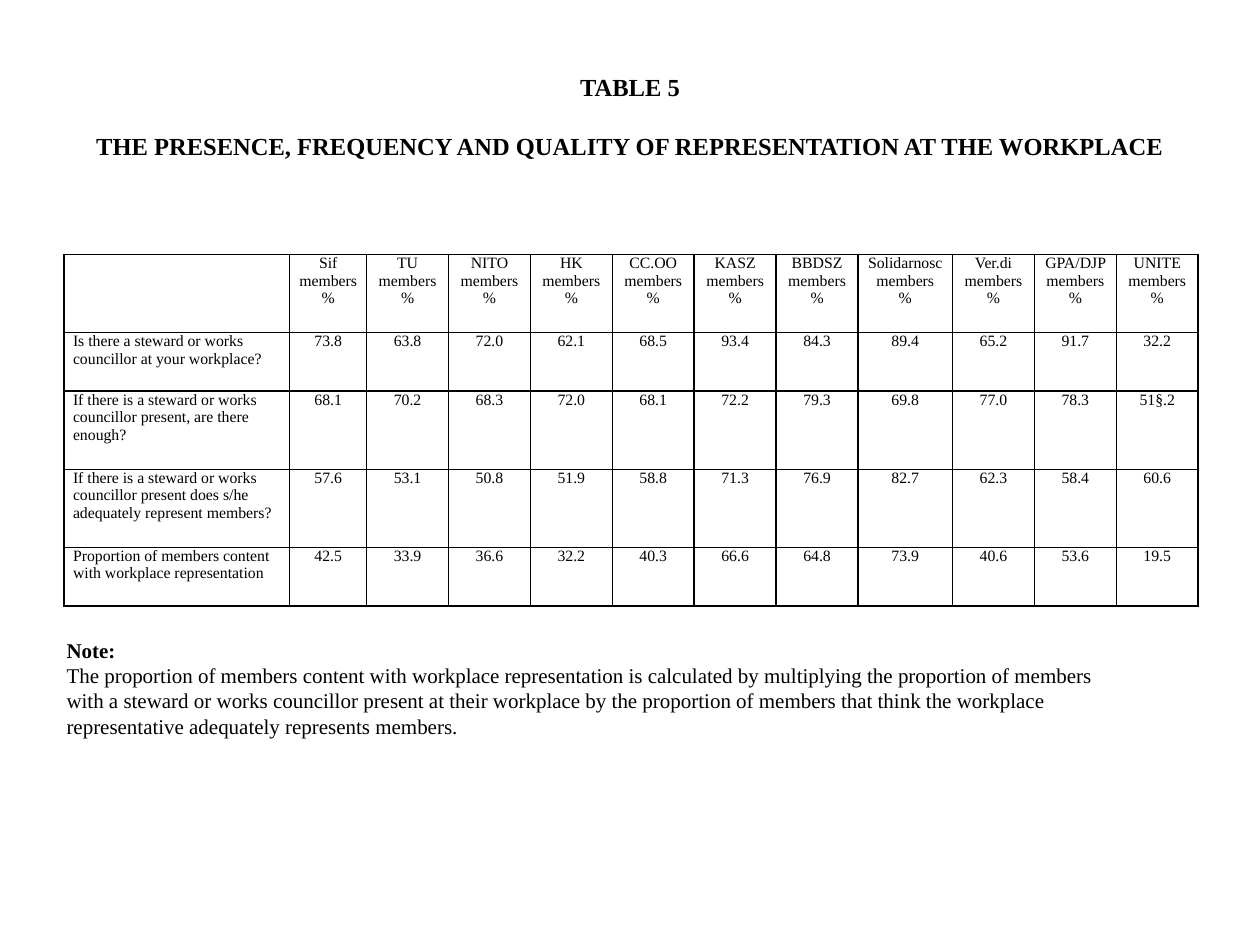
from lxml.etree import SubElement
from pptx import Presentation
from pptx.dml.color import RGBColor
from pptx.enum.text import MSO_ANCHOR, MSO_AUTO_SIZE, PP_ALIGN
from pptx.oxml import parse_xml
from pptx.oxml.ns import nsdecls, qn
from pptx.util import Inches, Pt

COLORS = {"ink": "000000", "paper": "FFFFFF"}
GRID = 0.1  # inches per grid column and row
LINE_ROWS = 1.55  # grid rows taken by one line of table text

UNIONS = ["Sif", "TU", "NITO", "HK", "CC.OO", "KASZ", "BBDSZ",
          "Solidarnosc", "Ver.di", "GPA/DJP", "UNITE"]
COLUMN_WIDTHS = [17.9, 6.1] + [6.5] * 6 + [7.5] + [6.5] * 3

# Question, lines of text in its row, and shares by union
ANSWERS = [
    ("Is there a steward or works councillor at your workplace?", 3,
     "73.8 63.8 72.0 62.1 68.5 93.4 84.3 89.4 65.2 91.7 32.2"),
    ("If there is a steward or works councillor present, are there enough?", 4,
     "68.1 70.2 68.3 72.0 68.1 72.2 79.3 69.8 77.0 78.3 51§.2"),
    ("If there is a steward or works councillor present does s/he "
     "adequately represent members?", 4,
     "57.6 53.1 50.8 51.9 58.8 71.3 76.9 82.7 62.3 58.4 60.6"),
    ("Proportion of members content with workplace representation", 3,
     "42.5 33.9 36.6 32.2 40.3 66.6 64.8 73.9 40.6 53.6 19.5"),
]
HEADER_LINES = 4

NOTE = ("The proportion of members content with workplace representation is "
        "calculated by multiplying the proportion of members with a steward or "
        "works councillor present at their workplace by the proportion of members "
        "that think the workplace representative adequately represents members.")


def grid(units):
    return Inches(units * GRID)


def apply(target, **values):
    for name, value in values.items():
        setattr(target, name, value)


class SlideBuilder:
    font_name = "Times New Roman"

    def __init__(self, deck):
        self.slide = deck.slides.add_slide(deck.slide_layouts[5])
        background = self.slide.background.fill
        background.solid()
        background.fore_color.rgb = RGBColor.from_string(COLORS["paper"])

    def add_lines(self, frame, lines, size, align=PP_ALIGN.LEFT, bold_lines=0, gap=0):
        """Add one paragraph per line; the first bold_lines are bold."""
        for index, line in enumerate(lines):
            paragraph = frame.add_paragraph() if index else frame.paragraphs[0]
            apply(paragraph, alignment=align, space_before=Pt(gap if index else 0))
            run = paragraph.add_run()
            run.text = line
            apply(run.font, name=self.font_name, size=Pt(size),
                  bold=index < bold_lines)
            run.font.color.rgb = RGBColor.from_string(COLORS["ink"])

    def title(self, lines, left, top, width, height):
        heading = self.slide.shapes.title
        apply(heading, left=grid(left), top=grid(top),
              width=grid(width), height=grid(height))
        frame = heading.text_frame
        apply(frame, vertical_anchor=MSO_ANCHOR.MIDDLE, word_wrap=True,
              auto_size=MSO_AUTO_SIZE.NONE)
        self.add_lines(frame, lines, 14, PP_ALIGN.CENTER, len(lines), gap=17)

    def border(self, cell):
        properties = cell._tc.get_or_add_tcPr()
        for index, side in enumerate(("lnL", "lnR", "lnT", "lnB")):
            edge = parse_xml(f'<a:{side} {nsdecls("a")} w="{Pt(1)}"/>')
            fill = SubElement(edge, qn("a:solidFill"))
            SubElement(fill, qn("a:srgbClr"), val=COLORS["ink"])
            properties.insert(index, edge)

    def table(self, rows, widths, heights, left, top):
        table = self.slide.shapes.add_table(
            len(rows), len(widths), grid(left), grid(top),
            grid(sum(widths)), grid(sum(heights))).table
        apply(table, first_row=False, horz_banding=False)
        for column, width in zip(table.columns, widths):
            column.width = grid(width)
        for row, height, contents in zip(table.rows, heights, rows):
            row.height = grid(height)
            for index, (cell, lines) in enumerate(zip(row.cells, contents)):
                apply(cell, margin_left=grid(0.7), margin_right=grid(0.7),
                      margin_top=0, margin_bottom=0)
                cell.fill.background()
                self.border(cell)
                align = PP_ALIGN.CENTER if index else PP_ALIGN.LEFT
                self.add_lines(cell.text_frame, lines, 9, align)

    def note(self, lines, left, top, width, height):
        frame = self.slide.shapes.add_textbox(
            grid(left), grid(top), grid(width), grid(height)).text_frame
        apply(frame, word_wrap=True, auto_size=MSO_AUTO_SIZE.SHAPE_TO_FIT_TEXT)
        self.add_lines(frame, lines, 12, bold_lines=1)


def main():
    deck = Presentation()
    apply(deck, slide_width=Inches(10), slide_height=Inches(7.5))
    page = SlideBuilder(deck)

    # Heading
    page.title(["TABLE 5", "THE PRESENCE, FREQUENCY AND QUALITY OF "
                "REPRESENTATION AT THE WORKPLACE"], 5, 3, 90, 12.5)

    # Survey results by union
    header = [[""]] + [[f"{union} members", "%"] for union in UNIONS]
    body = [[[question]] + [[share] for share in shares.split()]
            for question, _, shares in ANSWERS]
    line_counts = [HEADER_LINES] + [lines for _, lines, _ in ANSWERS]
    page.table([header] + body, COLUMN_WIDTHS,
               [count * LINE_ROWS for count in line_counts], 5.1, 20.2)

    # Explanation of the last row
    page.note(["Note:", NOTE], 4.3, 50.1, 85, 9.1)

    deck.save("out.pptx")


if __name__ == "__main__":
    main()
